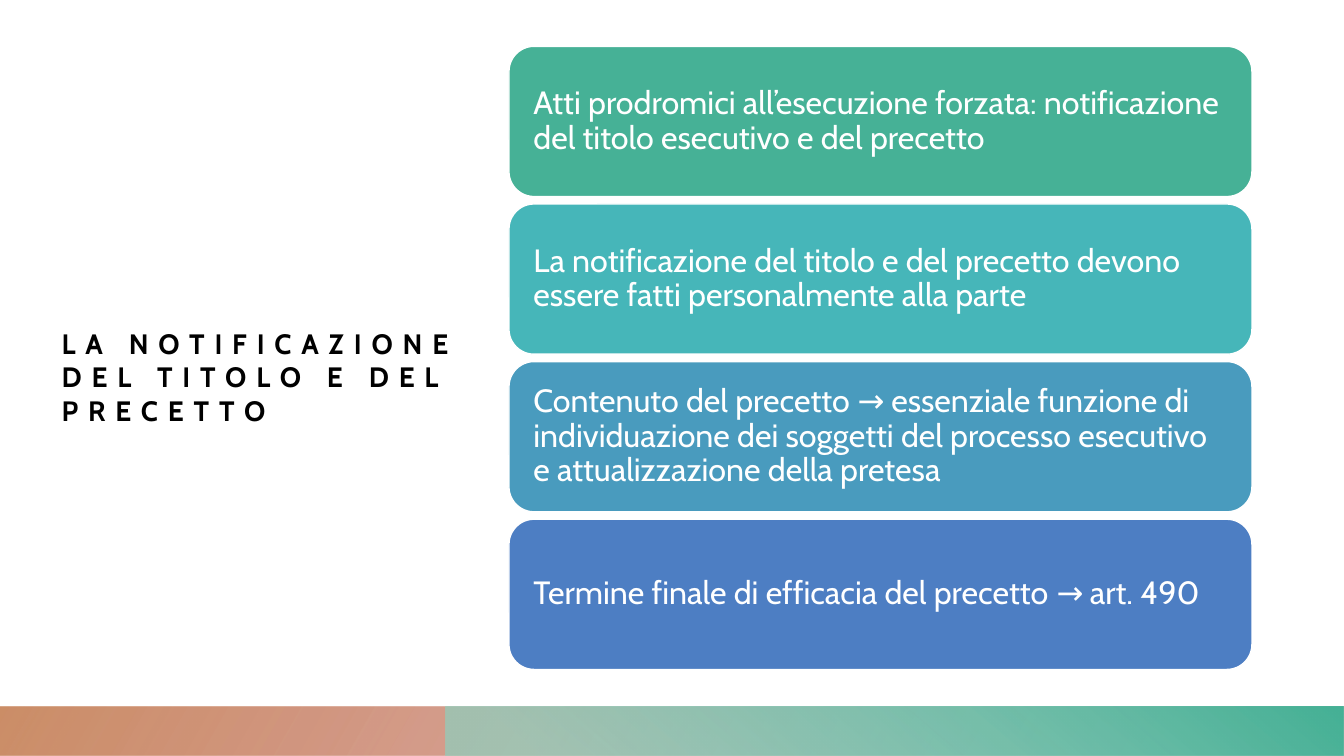
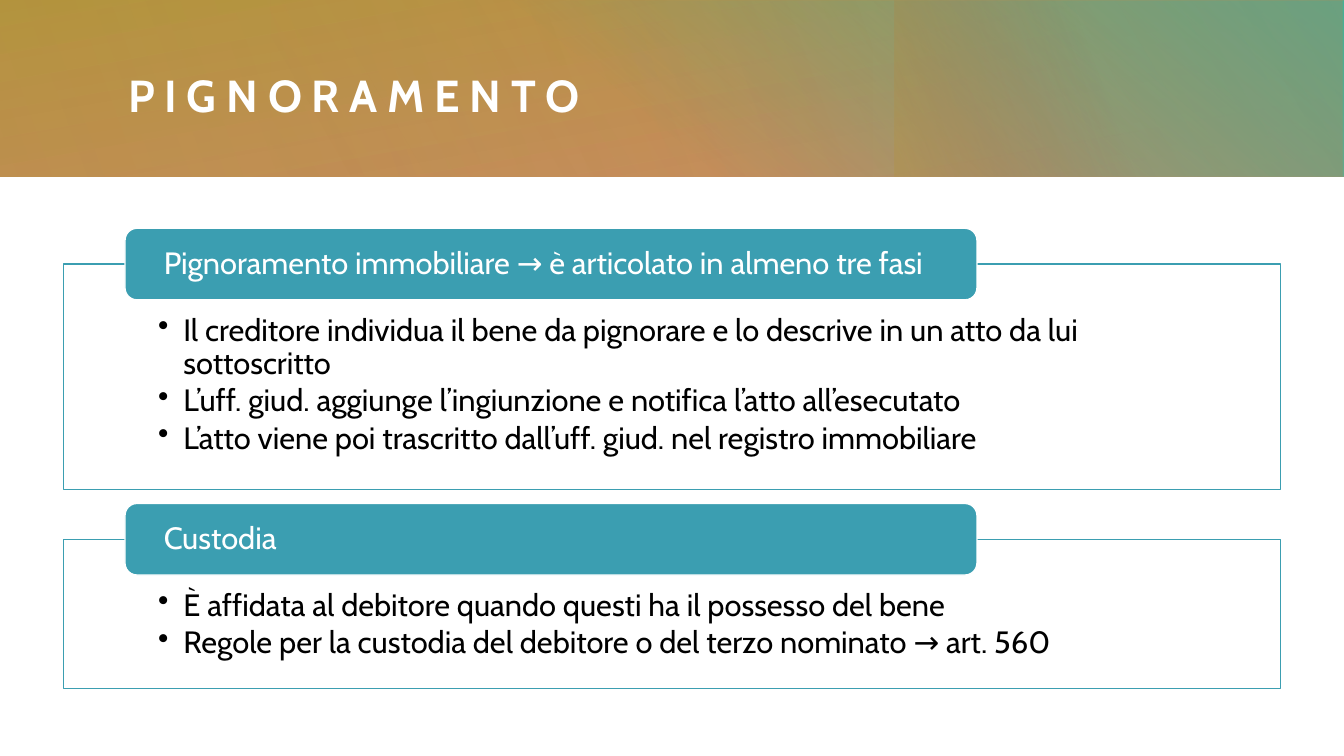
from lxml import etree
from pptx import Presentation
from pptx.dml.color import RGBColor
from pptx.enum.shapes import MSO_SHAPE as Kind
from pptx.enum.text import MSO_ANCHOR as Anchor, MSO_AUTO_SIZE as Auto, PP_ALIGN as Align
from pptx.oxml.ns import qn
from pptx.util import Inches, Pt

rgb = RGBColor.from_string
FONT = "Cabin"
WHITE, BLACK, TEAL = "FFFFFF", "000000", "3B9EB1"
RED, CLAY, GOLD, GREEN, MINT = "B13B3E", "C37B4D", "B19A3B", "46B196", "8ED2C1"

prs = Presentation()
prs.slide_width, prs.slide_height = Inches(13.33), Inches(7.5)
COL, ROW = prs.slide_width / 100, prs.slide_height / 100  # one percent of the slide


def draw(slide, kind, area, fill=None, line=None):
    """Add a shape; area is left, top, width, height in percent."""
    x, y, w, h = area
    shape = slide.shapes.add_shape(kind, int(x * COL), int(y * ROW), int(w * COL), int(h * ROW))
    shape.shadow.inherit = False
    if fill:
        shape.fill.solid()
        shape.fill.fore_color.rgb = rgb(fill)
    else:
        shape.fill.background()
    if line:
        shape.line.color.rgb = rgb(line)
        shape.line.width = Pt(1)
    else:
        shape.line.fill.background()
    return shape


def write(shape, text, size, color, pads=(0, 0, 0, 0), anchor=Anchor.MIDDLE, space=0.9):
    """Set the text; pads are left, top, right, bottom in inches."""
    frame = shape.text_frame
    frame.text = text
    frame.word_wrap = True
    frame.auto_size = Auto.NONE
    frame.vertical_anchor = anchor
    (frame.margin_left, frame.margin_top,
     frame.margin_right, frame.margin_bottom) = map(Inches, pads)
    for para in frame.paragraphs:
        para.alignment = Align.LEFT
        para.line_spacing = space
        for run in para.runs:
            run.font.name = FONT
            run.font.size = Pt(size)
            run.font.color.rgb = rgb(color)
    return frame


# Titles and gradient bands
# Band: area, stops (position, colour, opacity), angle, rotation, mirrored
foot = [
    ((0, 93.47, 100, 6.53), [(14, RED, 28), (100, CLAY, 85)], 150, 180, True),
    ((33.15, 93.47, 66.85, 6.53), [(9, MINT, 68), (99, GREEN, 100)], 230, 0, True),
]
head = [
    ((0, 0, 100, 23.33), [(0, CLAY, 83), (100, GOLD, 100)], 260, 0, False),
    ((36.08, 0.1, 63.92, 23.23), [(22, GREEN, 0), (99, GREEN, 100)], 310, 0, False),
    ((74.04, -13.2, 13.13, 49.87), [(45, RED, 0), (99, GOLD, 33)], 250, 270, False),
    ((20.1, 0, 79.82, 23.33), [(0, CLAY, 30), (99, CLAY, 0)], 330, 180, False),
    ((0, 0, 64.89, 23.33), [(0, CLAY, 21), (99, CLAY, 0)], 340, 0, False),
]
pages = [
    ("LA NOTIFICAZIONE DEL TITOLO E DEL PRECETTO", (4.58, 17.2, 30.15, 65.2), 20, BLACK, foot),
    ("PIGNORAMENTO", (9.53, 5.47, 85.15, 14.13), 32, WHITE, head),
]
for text, (x, y, w, h), size, color, bands in pages:
    slide = prs.slides.add_slide(prs.slide_layouts[5])
    for area, stops, angle, turn, flip in bands:
        band = draw(slide, Kind.RECTANGLE, area)
        band.rotation = turn
        props = band.element.spPr
        if flip:
            props.find(qn("a:xfrm")).set("flipH", "1")
        grad = etree.Element(qn("a:gradFill"), rotWithShape="1")
        marks = etree.SubElement(grad, qn("a:gsLst"))
        for pos, tint, alpha in stops:
            mark = etree.SubElement(marks, qn("a:gs"), pos=str(pos * 1000))
            hue = etree.SubElement(mark, qn("a:srgbClr"), val=tint)
            etree.SubElement(hue, qn("a:alpha"), val=str(alpha * 1000))
        etree.SubElement(grad, qn("a:lin"), ang=str(angle * 60000), scaled="0")
        props.replace(props.find(qn("a:noFill")), grad)
    title = slide.shapes.title
    title.left, title.top = int(x * COL), int(y * ROW)
    title.width, title.height = int(w * COL), int(h * ROW)
    frame = write(title, text, size, color, space=1.0)
    for run in frame.paragraphs[0].runs:
        run.font.bold = True
        run.font.element.set("spc", "700") if hasattr(run.font, "element") else \
            run.font._element.set("spc", "700") if hasattr(run.font, "_element") else \
            run._r.get_or_add_rPr().set("spc", "700")
    title.element.getparent().append(title.element)  # in front of the bands

notice, seizure = prs.slides

# Stack of cards
cards = [
    (GREEN, "Atti prodromici all’esecuzione forzata: notificazione del titolo esecutivo e del precetto"),
    ("46B6B9", "La notificazione del titolo e del precetto devono essere fatti personalmente alla parte"),
    ("499BBE", "Contenuto del precetto → essenziale funzione di individuazione dei soggetti "
               "del processo esecutivo e attualizzazione della pretesa"),
    ("4D7EC3", "Termine finale di efficacia del precetto → art. 490"),
]
for i, (fill, text) in enumerate(cards):
    card = draw(notice, Kind.ROUNDED_RECTANGLE, (37.87, 6.13 + i * 20.85, 55.28, 19.87), fill, WHITE)
    write(card, text, 23, WHITE, (0.17, 0.17, 0.17, 0.17))

# Framed lists, each with a tab on its top edge
lists = [
    ("Pignoramento immobiliare → è articolato in almeno tre fasi", 29.87, [
        "Il creditore individua il bene da pignorare e lo descrive in un atto da lui sottoscritto",
        "L’uff. giud. aggiunge l’ingiunzione e notifica l’atto all’esecutato",
        "L’atto viene poi trascritto dall’uff. giud. nel registro immobiliare"]),
    ("Custodia", 19.73, [
        "È affidata al debitore quando questi ha il possesso del bene",
        "Regole per la custodia del debitore o del terzo nominato → art. 560"]),
]
top = 34.93
for label, high, items in lists:
    panel = draw(seizure, Kind.RECTANGLE, (4.72, top, 90.55, high), WHITE, TEAL)
    frame = write(panel, "\n".join(items), 22, BLACK, (0.94, 0.5, 0.94, 0.17), Anchor.TOP)
    for para in frame.paragraphs:
        para.space_after = Pt(3)
        props = para._p.get_or_add_pPr()
        props.set("marL", str(Inches(0.25)))
        props.set("indent", str(Inches(-0.25)))
        etree.SubElement(props, qn("a:buChar"), char="•")
    tab = draw(seizure, Kind.ROUNDED_RECTANGLE, (9.3, top - 4.73, 63.39, 9.47), TEAL, WHITE)
    write(tab, label, 22, WHITE, (0.35, 0, 0.35, 0))
    top += high + 6.53

prs.save("out.pptx")
